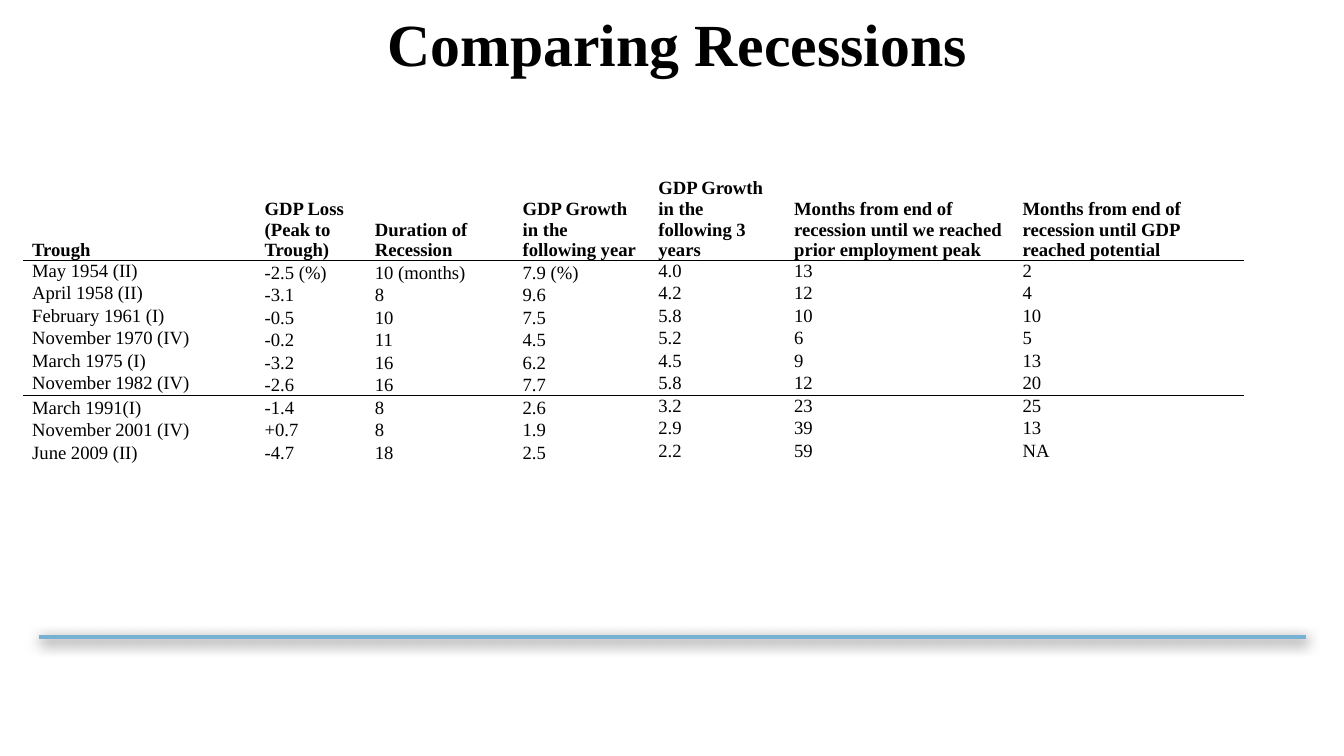
"""Build the slide comparing recessions by depth, duration and recovery."""
import pptx
import pptx.util
from lxml import etree
from pptx.dml.color import RGBColor
from pptx.enum.shapes import MSO_CONNECTOR
from pptx.enum.text import MSO_ANCHOR, PP_ALIGN
from pptx.oxml.ns import qn
from pptx.util import Inches

FONT = "Times New Roman"
BLACK = RGBColor(0x00, 0x00, 0x00)
BLUE = RGBColor(0x76, 0xB0, 0xD3)

TITLE = "Comparing Recessions"
HEADERS = [
    "Trough",
    "GDP Loss (Peak to Trough)",
    "Duration of Recession",
    "GDP Growth in the following year",
    "GDP Growth in the following 3 years",
    "Months from end of recession until we reached prior employment peak",
    "Months from end of recession until GDP reached potential",
]
RECESSIONS = [
    ("May 1954 (II)", "-2.5 (%)", "10 (months)", "7.9 (%)", "4.0", "13", "2"),
    ("April 1958 (II)", "-3.1", "8", "9.6", "4.2", "12", "4"),
    ("February 1961 (I)", "-0.5", "10", "7.5", "5.8", "10", "10"),
    ("November 1970 (IV)", "-0.2", "11", "4.5", "5.2", "6", "5"),
    ("March 1975 (I)", "-3.2", "16", "6.2", "4.5", "9", "13"),
    ("November 1982 (IV)", "-2.6", "16", "7.7", "5.8", "12", "20"),
    ("March 1991(I)", "-1.4", "8", "2.6", "3.2", "23", "25"),
    ("November 2001 (IV)", "+0.7", "8", "1.9", "2.9", "39", "13"),
    ("June 2009 (II)", "-4.7", "18", "2.5", "2.2", "59", "NA"),
]
SLIDE_WIDTH = 10
COLUMN_WIDTHS = [1.73, 0.82, 1.1, 1.02, 1.02, 1.7, 1.7]
SIDE_MARGINS = [0.07, 0.07, 0.07, 0.07, 0.06, 0.05, 0.05]
HEADER_HEIGHT, BODY_HEIGHT = 0.82, 1.5
FIRST_MODERN_ROW = 7
RULED_ROWS = (0, FIRST_MODERN_ROW - 1)


def add_run(paragraph, text, size, bold):
    run = paragraph.add_run()
    run.text = text
    run.font.name = FONT
    run.font.size = pptx.util.Pt(size)
    run.font.bold = bold
    run.font.color.rgb = BLACK


def set_border(cell, side, visible):
    width = pptx.util.Pt(1) if visible else 0
    border = etree.Element(qn(f"a:{side}"), w=str(width))
    if visible:
        fill = etree.SubElement(border, qn("a:solidFill"))
        etree.SubElement(fill, qn("a:srgbClr"), val=str(BLACK))
    else:
        etree.SubElement(border, qn("a:noFill"))
    cell._tc.get_or_add_tcPr().append(border)


def fill_cell(cell, text, row, column):
    bottom = row == 0 or 1 <= column <= 3 or (column == 0 and row >= FIRST_MODERN_ROW)
    cell.vertical_anchor = MSO_ANCHOR.BOTTOM if bottom else MSO_ANCHOR.TOP
    cell.margin_left = cell.margin_right = Inches(SIDE_MARGINS[column])
    cell.margin_top = cell.margin_bottom = 0
    add_run(cell.text_frame.paragraphs[0], text, 10, row == 0)
    set_border(cell, "lnL", False)
    set_border(cell, "lnR", False)
    set_border(cell, "lnT", row - 1 in RULED_ROWS)
    set_border(cell, "lnB", row in RULED_ROWS)
    cell.fill.background()


def add_footer_line(slide):
    line = slide.shapes.add_connector(
        MSO_CONNECTOR.STRAIGHT, Inches(0.29), Inches(4.74), Inches(9.72), Inches(4.74))
    line.line.color.rgb = BLUE
    line.line.width = pptx.util.Pt(2)
    effects = etree.SubElement(line._element.spPr, qn("a:effectLst"))
    shadow = etree.SubElement(
        effects, qn("a:outerShdw"), blurRad=str(pptx.util.Pt(7.5)),
        dist=str(pptx.util.Pt(2)), dir="5400000", rotWithShape="0")
    color = etree.SubElement(shadow, qn("a:srgbClr"), val=str(BLACK))
    etree.SubElement(color, qn("a:alpha"), val="65000")


def add_title(slide):
    box = slide.shapes.add_textbox(Inches(0.58), 0, Inches(8.92), Inches(0.64))
    frame = box.text_frame
    frame.word_wrap = True
    paragraph = frame.paragraphs[0]
    paragraph.alignment = PP_ALIGN.CENTER
    add_run(paragraph, TITLE, 32, True)


def add_recession_table(slide):
    rows = [HEADERS, *RECESSIONS]
    table = slide.shapes.add_table(
        len(rows), len(HEADERS), Inches(0.17), Inches(1.12),
        Inches(sum(COLUMN_WIDTHS)), Inches(HEADER_HEIGHT + BODY_HEIGHT)).table
    table.horz_banding = False
    for column, width in zip(table.columns, COLUMN_WIDTHS):
        column.width = Inches(width)
    for row, values in enumerate(rows):
        height = BODY_HEIGHT / len(RECESSIONS) if row else HEADER_HEIGHT
        table.rows[row].height = Inches(height)
        for column, text in enumerate(values):
            fill_cell(table.cell(row, column), text, row, column)


def main():
    presentation = pptx.Presentation()
    presentation.slide_width = Inches(SLIDE_WIDTH)
    presentation.slide_height = Inches(SLIDE_WIDTH * 9 / 16)
    slide = presentation.slides.add_slide(presentation.slide_layouts[6])
    add_footer_line(slide)
    add_title(slide)
    add_recession_table(slide)
    presentation.save("out.pptx")


if __name__ == "__main__":
    main()
